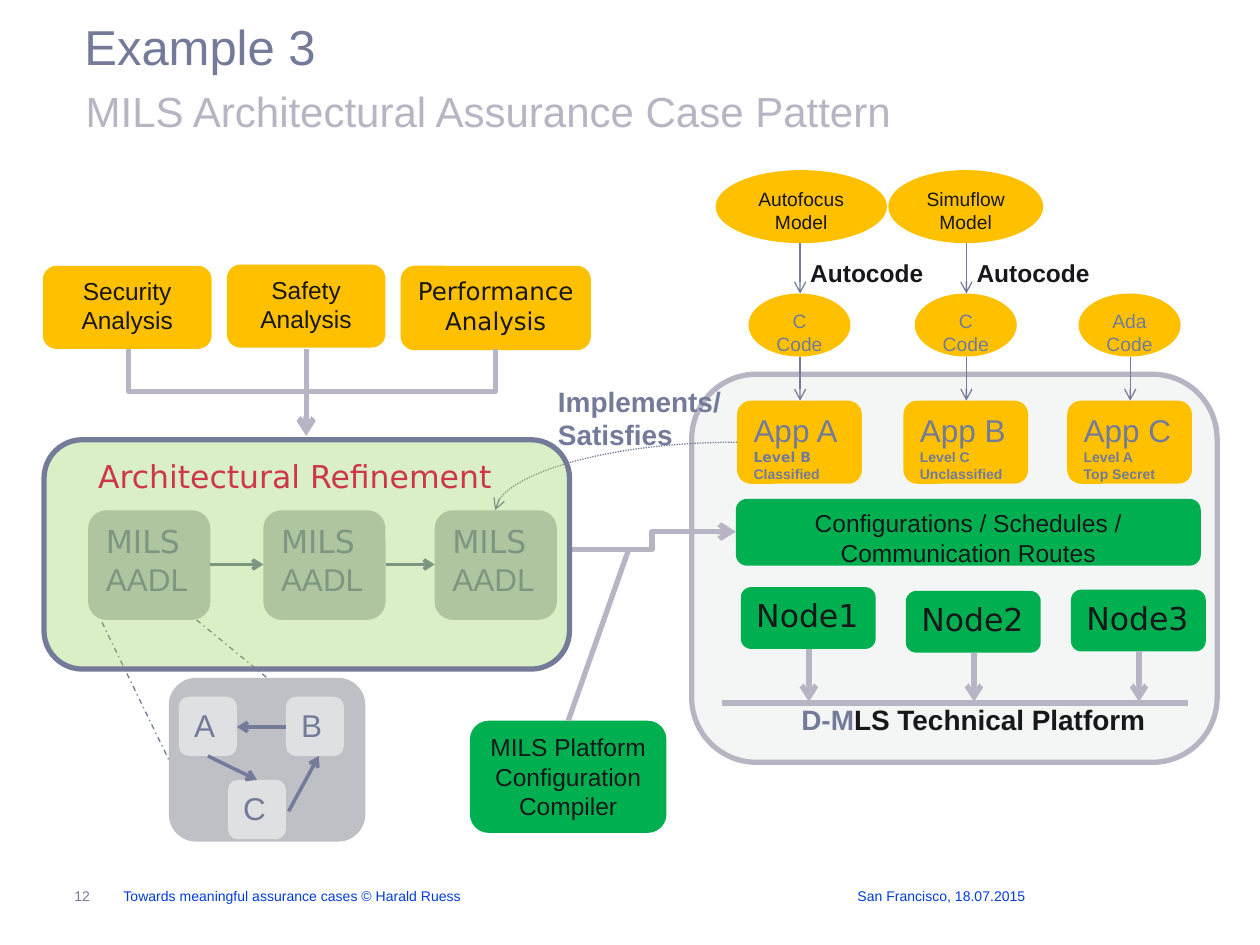
from pptx import Presentation
from pptx.dml.color import RGBColor
from pptx.enum.dml import MSO_LINE
from pptx.enum.shapes import MSO_CONNECTOR as CONN, MSO_SHAPE as SHAPE
from pptx.enum.text import MSO_ANCHOR as ANCHOR, PP_ALIGN as ALIGN
from pptx.oxml.ns import qn
from pptx.util import Inches, Pt
from lxml import etree

SLATE = RGBColor(0x73, 0x7B, 0x99)
LILAC = RGBColor(0xB7, 0xB5, 0xC3)
INK = RGBColor(0x18, 0x18, 0x1B)
BLUE = RGBColor(0x00, 0x3C, 0xD6)
RED = RGBColor(0xCE, 0x36, 0x4C)
AMBER = RGBColor(0xFF, 0xC0, 0x00)
GREEN = RGBColor(0x00, 0xB0, 0x50)
LIME = RGBColor(0x92, 0xD0, 0x50)
GREY = RGBColor(0xBE, 0xC0, 0xC5)
PALE = RGBColor(0xDE, 0xE0, 0xE2)
ARIAL, DEJAVU = "Arial", "DejaVu Sans"

# Content: places are left, top, width, height in inches
HEADINGS = [  # text, place, size, colour
    ("Example 3", (0.67, 0.13, 8.82, 0.39), 28, SLATE),
    ("MILS Architectural Assurance Case Pattern", (0.68, 0.68, 8.73, 0.39), 24, LILAC),
]
FOOTERS = [  # text, left, width, colour, alignment
    ("12", 0.59, 0.39, SLATE, ALIGN.LEFT),
    ("Towards meaningful assurance cases © Harald Ruess", 0.98, 5.35, BLUE, ALIGN.LEFT),
    ("San Francisco, 18.07.2015", 6.37, 1.77, BLUE, ALIGN.RIGHT),
]
ANALYSES = [  # lines, place, font
    (["Security Analysis"], (0.34, 2.11, 1.34, 0.66), ARIAL),
    (["Safety Analysis"], (1.8, 2.1, 1.26, 0.66), ARIAL),
    (["Performance", "Analysis"], (3.18, 2.11, 1.51, 0.67), DEJAVU),
]
MILS_LEFTS = [0.7, 2.09, 3.45]
PARTS = [("A", 1.42, 5.53), ("B", 2.27, 5.53), ("C", 1.81, 6.19)]
PART_ARROWS = [(1.65, 6, 2.04, 6.19), (2.27, 5.77, 1.88, 5.77), (2.29, 6.44, 2.53, 6)]
ZOOM_LINES = [(0.81, 4.94, 1.34, 6.03), (1.56, 4.92, 2.12, 5.38)]
APPS = [  # name, level, class, level font, left, code language
    ("App A", "Level B", "Classified", DEJAVU, 5.85, "C"),
    ("App B", "Level C", "Unclassified", ARIAL, 7.17, "C"),
    ("App C", "Level A", "Top Secret", ARIAL, 8.47, "Ada"),
]
MODELS = [("Autofocus", 5.68, 1.36), ("Simuflow", 7.05, 1.23)]
NODES = [("Node1", 5.88, 4.66), ("Node2", 7.19, 4.69), ("Node3", 8.5, 4.68)]
BUS_Y = 5.58

prs = Presentation()
prs.slide_width, prs.slide_height = Inches(10), Inches(7.5)
shapes = prs.slides.add_slide(prs.slide_layouts[6]).shapes


def write(tf, lines, size, color, align=ALIGN.LEFT, font=ARIAL, bold=False, wrap=True):
    """Fill a text frame; a line is a string or (text, size, bold, font)."""
    tf.word_wrap = wrap
    tf.vertical_anchor = ANCHOR.TOP
    tf.text = "\n".join(ln if isinstance(ln, str) else ln[0] for ln in lines)
    for p, ln in zip(tf.paragraphs, lines):
        sz, b, name = (size, bold, font) if isinstance(ln, str) else ln[1:]
        p.alignment = align
        for r in p.runs:
            r.font.size, r.font.bold, r.font.name = Pt(sz), b, name
            r.font.color.rgb = color


def label(lines, place, size, color, inset=True, **style):
    tf = shapes.add_textbox(*map(Inches, place)).text_frame
    write(tf, lines, size, color, **style)
    if not inset:
        tf.margin_left = tf.margin_right = tf.margin_top = tf.margin_bottom = 0
    return tf


def box(place, fill, lines=(), size=14, color=INK, kind=SHAPE.ROUNDED_RECTANGLE,
        border=None, opacity=None, **style):
    sp = shapes.add_shape(kind, *map(Inches, place))
    sp.shadow.inherit = False
    sp.fill.solid()
    sp.fill.fore_color.rgb = fill
    if opacity:
        clr = sp.fill._xPr.find(".//" + qn("a:srgbClr"))
        etree.SubElement(clr, qn("a:alpha"), val=str(opacity * 1000))
    if border is None:
        sp.line.fill.background()
    else:
        sp.line.color.rgb, sp.line.width = border, Pt(3)
    if lines:
        write(sp.text_frame, lines, size, color, **style)
    return sp


def link(x1, y1, x2, y2, color=SLATE, width=0.75, arrow=True, dash=None, kind=CONN.STRAIGHT):
    cn = shapes.add_connector(kind, *map(Inches, (x1, y1, x2, y2)))
    cn.line.color.rgb, cn.line.width = color, Pt(width)
    if dash:
        cn.line.dash_style = dash
    if arrow:
        etree.SubElement(cn.line._get_or_add_ln(), qn("a:tailEnd"), type="arrow")
    etree.SubElement(cn._element.spPr, qn("a:effectLst"))
    return cn


def drop_elbow(x1, y1, x2, y2, **style):
    """Elbow that leaves downwards: a horizontal one turned by a quarter."""
    cx, cy = (x1 + x2) / 2, (y1 + y2) / 2
    half_w, half_h = (y2 - y1) / 2, abs(x2 - x1) / 2
    side = 1 if x2 > x1 else -1
    cn = link(cx + side * half_w, cy - half_h, cx - side * half_w, cy + half_h,
              kind=CONN.ELBOW, **style)
    cn._element.spPr.find(qn("a:xfrm")).set("rot", str((270 if side > 0 else 90) * 60000))


# Headings and footer
for text, place, size, color in HEADINGS:
    label([text], place, size, color, inset=False)
for text, left, width, color, align in FOOTERS:
    tf = label([text], (left, 7.01, width, 0.2), 8, color, inset=False, align=align)
    tf.vertical_anchor = ANCHOR.MIDDLE

# Chain of MILS models
for left in MILS_LEFTS:
    box((left, 4.05, 0.97, 0.87), GREY, [("MILS", 18, False, DEJAVU), "AADL"], 18, SLATE)
for left, following in zip(MILS_LEFTS, MILS_LEFTS[1:]):
    link(left + 0.97, 4.48, following, 4.48, width=2)

# Analyses feeding the refinement
heavy = dict(color=LILAC, width=3)
for lines, place, font in ANALYSES:
    box(place, AMBER, lines, align=ALIGN.CENTER, font=font)
link(2.43, 2.77, 2.43, 3.46, **heavy)
for x in (1.02, 3.93):
    drop_elbow(x, 2.77, 2.43, 3.45, **heavy)

# Technical platform with nodes on a bus
panel = box((5.49, 2.97, 4.17, 3.08), PALE, ["D-M"], 16, SLATE,
            border=LILAC, opacity=32, bold=True)
tf = panel.text_frame
tf.vertical_anchor = ANCHOR.BOTTOM
tf.margin_left, tf.margin_bottom = Inches(0.72), Inches(0.06)
r = tf.paragraphs[0].add_run()
r.text = "LS Technical Platform"
r.font.size, r.font.bold, r.font.name = Pt(16), True, ARIAL
r.font.color.rgb = INK
for name, left, top in NODES:
    box((left, top, 1.07, 0.49), GREEN, [name], 18, font=DEJAVU)
    link(left + 0.54, top + 0.49, left + 0.54, BUS_Y - 0.01, **heavy)
link(5.73, BUS_Y, 9.43, BUS_Y, arrow=False, **heavy)

# Configuration and its compiler
box((5.84, 3.96, 3.69, 0.53), GREEN,
    ["Configurations / Schedules / Communication Routes"], align=ALIGN.CENTER)
link(4.51, 4.36, 5.84, 4.22, kind=CONN.ELBOW, **heavy)
box((3.73, 5.72, 1.56, 0.89), GREEN,
    ["MILS Platform", "Configuration", "Compiler"], align=ALIGN.CENTER)
link(4.99, 4.36, 4.51, 5.72, arrow=False, **heavy)

# Applications, their code and the models behind it
oval = dict(size=11, kind=SHAPE.OVAL, align=ALIGN.CENTER, wrap=False)
for name, level, rating, font, left, language in APPS:
    box((left, 3.18, 0.99, 0.66), AMBER,
        [name, (level, 8, True, font), (rating, 8, True, ARIAL)], 18, SLATE)
    box((left + 0.09, 2.33, 0.81, 0.5), AMBER, [language, "Code"], color=SLATE, **oval)
    link(left + 0.5, 2.83, left + 0.5, 3.18)
for (name, left, width), app in zip(MODELS, APPS):
    x = app[4] + 0.5
    box((left, 1.35, width, 0.58), AMBER, [name, "Model"], **oval)
    link(x, 1.93, x, 2.33)
    label(["Autocode"], (x - 0.02, 2, 1.1, 0.34), 14, INK,
          align=ALIGN.CENTER, bold=True, wrap=False)

# Zoom into one model
box((1.34, 5.38, 1.56, 1.3), GREY)
for name, left, top in PARTS:
    box((left, top, 0.46, 0.47), PALE, [name], 18, SLATE)
for ends in PART_ARROWS:
    link(*ends, width=2)
for ends in ZOOM_LINES:
    link(*ends, arrow=False, dash=MSO_LINE.DASH_DOT)

# Implements / satisfies relation
curve = link(5.85, 3.51, 3.93, 4.05, dash=MSO_LINE.ROUND_DOT, kind=CONN.CURVE)
curve._element.spPr.find(qn("a:prstGeom")).set("prst", "curvedConnector2")
label(["Implements/", "Satisfies"], (4.33, 3, 1.55, 0.64), 16, SLATE, bold=True)

# Translucent refinement panel over the chain
panel = box((0.35, 3.49, 4.17, 1.82), LIME, ["Architectural Refinement"], 18, RED,
            border=SLATE, opacity=32, font=DEJAVU)
panel.text_frame.margin_left = Inches(0.34)

prs.save("out.pptx")
